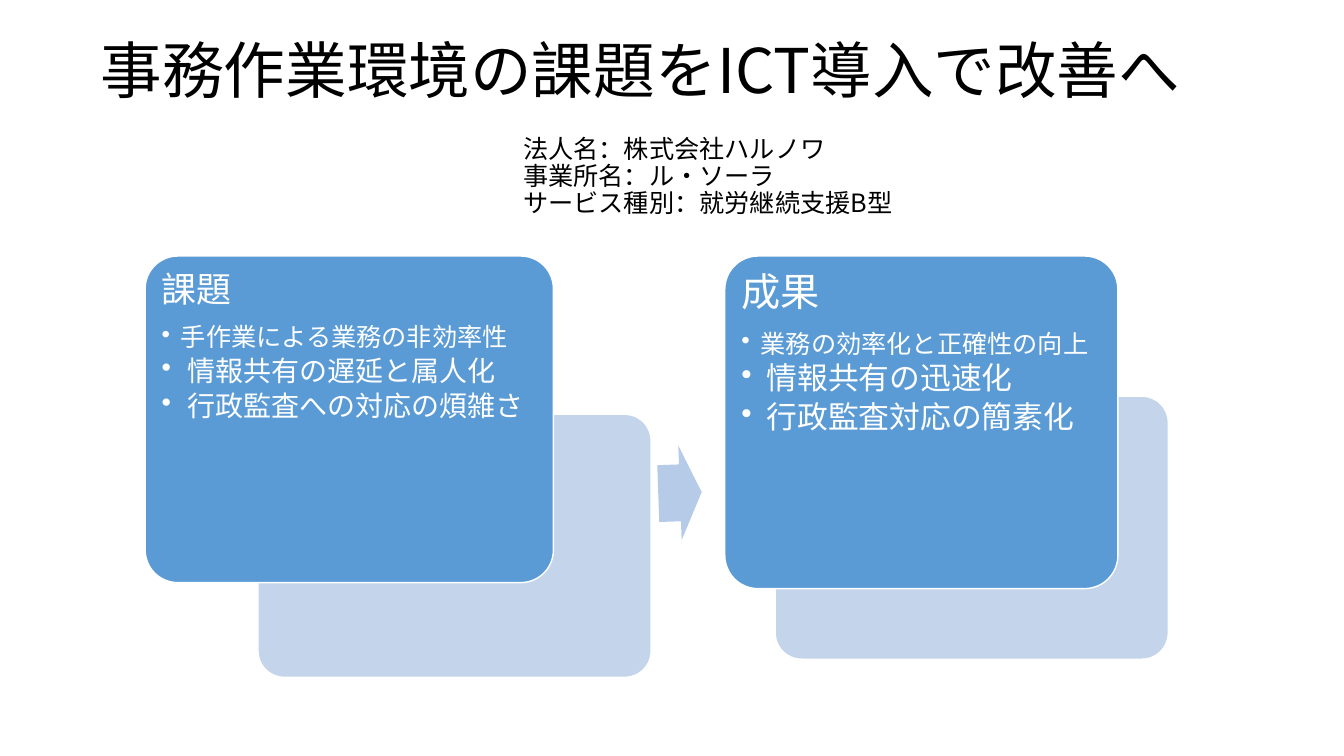
from typing import NamedTuple

from lxml.etree import SubElement
from pptx import Presentation
from pptx.dml.color import RGBColor
from pptx.enum.shapes import MSO_SHAPE
from pptx.enum.text import MSO_ANCHOR, MSO_AUTO_SIZE, PP_ALIGN
from pptx.oxml.ns import qn
from pptx.util import Inches, Pt

FONT = "Noto Sans CJK JP"
BLACK, WHITE = "000000", "FFFFFF"
BLUE, PALE, MIST = "5B9BD5", "C4D5EB", "B5CBE7"
WIDE, HIGH = Inches(13.333), Inches(7.5)
PAD_X, PAD_Y = 0.71, 1.27


class Box(NamedTuple):
    left: float
    top: float
    width: float
    height: float

    def place(self) -> tuple[int, int, int, int]:
        return (across(self.left), down(self.top),
                across(self.width), down(self.height))

    def inner(self) -> "Box":
        return Box(self.left + PAD_X, self.top + PAD_Y,
                   self.width - 2 * PAD_X, self.height - 2 * PAD_Y)


class Line(NamedTuple):
    text: str
    size: int
    indent: float = 0
    after: float = 0


class Panel(NamedTuple):
    front: Box
    back: Box
    lines: list[Line]


def across(share: float) -> int:
    return round(WIDE * share / 100)


def down(share: float) -> int:
    return round(HIGH * share / 100)


def color(code: str) -> RGBColor:
    return RGBColor.from_string(code)


def write(frame, lines: list[Line], tint: str) -> None:
    frame.word_wrap = True
    frame.auto_size = MSO_AUTO_SIZE.NONE
    frame.text = "\n".join(line.text for line in lines)
    for para, line in zip(frame.paragraphs, lines):
        para.alignment = PP_ALIGN.LEFT
        para.line_spacing = 0.9
        para.space_after = Pt(line.size * line.after)
        if line.indent:
            para.level = 1
            props = para._p.get_or_add_pPr()
            props.set("marL", str(across(line.indent)))
            props.set("indent", str(-across(line.indent)))
            SubElement(props, qn("a:buChar"), char="•")
        for run in para.runs:
            run.font.size = Pt(line.size)
            run.font.name = FONT
            run.font.color.rgb = color(tint)
            SubElement(run._r.get_or_add_rPr(), qn("a:ea"), typeface=FONT)


def add_card(slide, box: Box, fill: str) -> None:
    card = slide.shapes.add_shape(MSO_SHAPE.ROUNDED_RECTANGLE, *box.place())
    card.adjustments[0] = 0.1
    card.shadow.inherit = False
    card.fill.solid()
    card.fill.fore_color.rgb = color(fill)
    card.line.color.rgb = color(WHITE)
    card.line.width = Pt(1)


def add_panel(slide, panel: Panel) -> None:
    add_card(slide, panel.back, PALE)
    add_card(slide, panel.front, BLUE)
    frame = slide.shapes.add_textbox(*panel.front.inner().place()).text_frame
    frame.margin_left = frame.margin_right = Inches(0.07)
    frame.margin_top = frame.margin_bottom = Inches(0.07)
    write(frame, panel.lines, WHITE)


def add_arrow(slide, box: Box) -> None:
    arrow = slide.shapes.add_shape(MSO_SHAPE.RIGHT_ARROW, *box.place())
    arrow.adjustments[0] = 0.6
    arrow.adjustments[1] = 0.5
    arrow.rotation = 358
    arrow.shadow.inherit = False
    arrow.fill.solid()
    arrow.fill.fore_color.rgb = color(MIST)
    arrow.line.fill.background()


def list_lines(head: str, size: int, items: list[str], small: int, big: int) -> list[Line]:
    first, *rest = items
    return [Line(head, size, after=0.42), Line(first, small, 1.43, 0.18),
            *(Line(item, big, 1.88, 0.18) for item in rest)]


ISSUE = Panel(
    Box(10.8, 33.87, 30.38, 43.2), Box(19.2, 54.8, 29.25, 34.8),
    list_lines("課題", 25, ["手作業による業務の非効率性", "情報共有の遅延と属人化",
                          "行政監査への対応の煩雑さ"], 18, 20))
RESULT = Panel(
    Box(53.93, 33.87, 29.25, 44), Box(57.68, 52.4, 29.25, 34.8),
    list_lines("成果", 28, ["業務の効率化と正確性の向上", "情報共有の迅速化",
                          "行政監査対応の簡素化"], 18, 22))
FACTS = ["法人名：株式会社ハルノワ", "事業所名：ル・ソーラ",
         "サービス種別：就労継続支援B型"]


def main() -> None:
    deck = Presentation()
    deck.slide_width, deck.slide_height = WIDE, HIGH
    slide = deck.slides.add_slide(deck.slide_layouts[5])

    title = slide.shapes.title
    title.left, title.top, title.width, title.height = Box(6.75, 3.07, 86.25, 13.2).place()
    title.text_frame.vertical_anchor = MSO_ANCHOR.MIDDLE
    write(title.text_frame, [Line("事務作業環境の課題をICT導入で改善へ", 44)], BLACK)

    add_panel(slide, ISSUE)
    add_arrow(slide, Box(48.98, 58.93, 3.23, 12.53))
    add_panel(slide, RESULT)

    facts = slide.shapes.add_textbox(*Box(38.18, 16.27, 46.58, 14.4).place())
    facts.text_frame.vertical_anchor = MSO_ANCHOR.MIDDLE
    write(facts.text_frame, [Line(fact, 18) for fact in FACTS], BLACK)

    deck.save("out.pptx")


if __name__ == "__main__":
    main()
